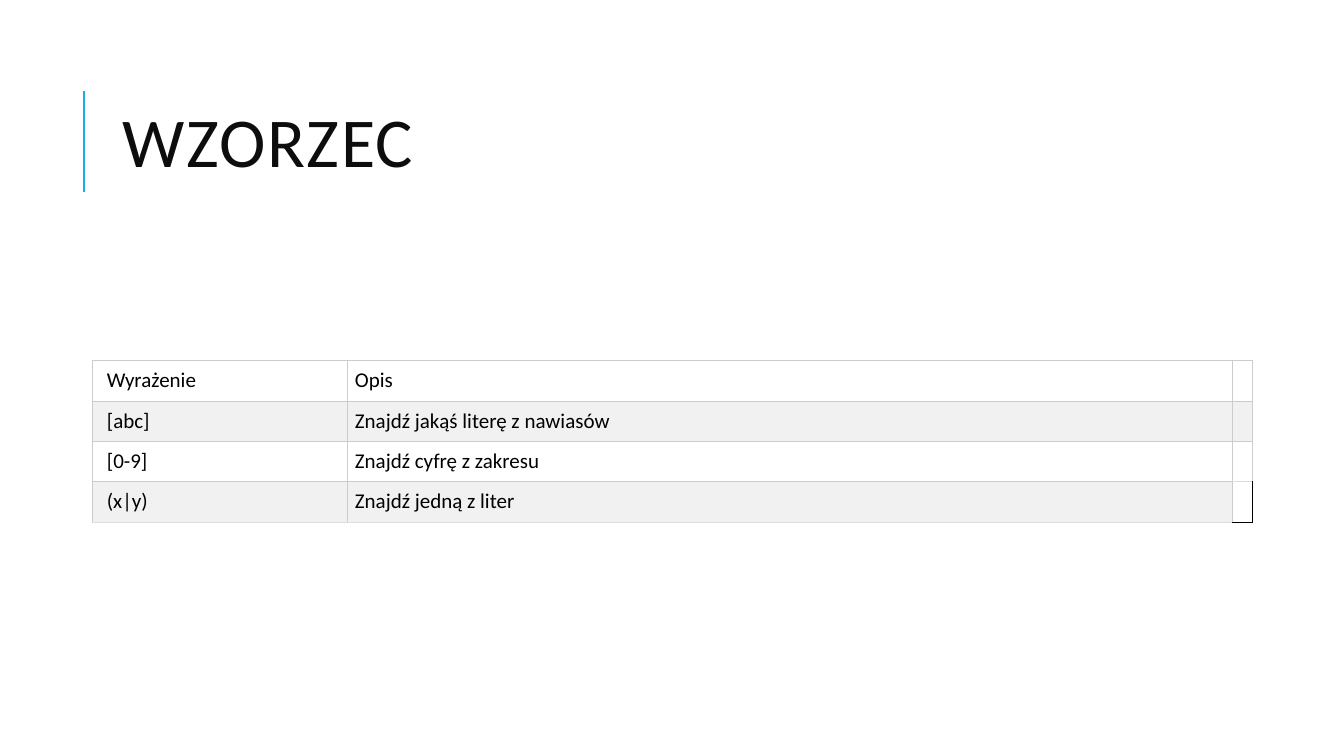
from dataclasses import dataclass

from lxml import etree
from pptx import Presentation
from pptx.dml.color import RGBColor
from pptx.enum.shapes import MSO_CONNECTOR
from pptx.enum.text import MSO_ANCHOR
from pptx.oxml.ns import qn
from pptx.util import Inches, Pt

STRAIGHT = MSO_CONNECTOR.STRAIGHT
MIDDLE = MSO_ANCHOR.MIDDLE
TOP = MSO_ANCHOR.TOP


@dataclass(frozen=True)
class Theme:
    font: str = "Calibri"
    accent: str = "1CADE4"
    title: str = "0D0D0D"
    ink: str = "000000"
    plain: str = "FFFFFF"
    band: str = "F1F1F1"
    grid: str = "CCCCCC"
    pale: str = "DDDDDD"
    title_size: float = 50
    cell_size: float = 15
    rule: float = 1.5
    edge: float = 0.75


@dataclass(frozen=True)
class Entry:
    term: str
    note: str


THEME = Theme()
ENTRIES = [
    Entry("Wyrażenie", "Opis"),
    Entry("[abc]", "Znajdź jakąś literę z nawiasów"),
    Entry("[0-9]", "Znajdź cyfrę z zakresu"),
    Entry("(x|y)", "Znajdź jedną z liter"),
]
WIDTHS = [2.53, 8.77, 0.2]
HEIGHT = 0.4
PAD = 0.07


def write(frame, text: str, *, size: float, color: str,
          spacing: float = 1, track: int = 0) -> None:
    para = frame.paragraphs[0]
    para.line_spacing = spacing
    run = para.add_run()
    run.text = text
    run.font.name = THEME.font
    run.font.size = Pt(size)
    run.font.color.rgb = RGBColor.from_string(color)
    if track:
        run.font._element.set("spc", str(track))


def add_rule(slide) -> None:
    rule = slide.shapes.add_connector(
        STRAIGHT, Inches(0.83), Inches(1.9), Inches(0.83), Inches(0.9))
    rule.line.color.rgb = RGBColor.from_string(THEME.accent)
    rule.line.width = Pt(THEME.rule)
    etree.SubElement(rule._element.spPr, qn("a:effectLst"))


def add_title(slide) -> None:
    box = slide.shapes.add_textbox(
        Inches(1.12), Inches(0.64), Inches(10.63), Inches(1.64))
    frame = box.text_frame
    frame.word_wrap = True
    frame.vertical_anchor = MIDDLE
    write(frame, "WZORZEC", size=THEME.title_size, color=THEME.title,
          spacing=0.8, track=100)


def set_edges(cell, colors: dict[str, str]) -> None:
    props = cell._tc.get_or_add_tcPr()
    for side, color in colors.items():
        line = etree.SubElement(props, qn(f"a:ln{side}"), w=str(Pt(THEME.edge)))
        fill = etree.SubElement(line, qn("a:solidFill"))
        etree.SubElement(fill, qn("a:srgbClr"), val=color)


def pick_edges(row: int, col: int) -> dict[str, str]:
    edges = dict.fromkeys("LRTB", THEME.grid)
    last_row = row == len(ENTRIES) - 1
    last_col = col == len(WIDTHS) - 1
    if last_row and last_col:
        edges.update(R=THEME.ink, T=THEME.pale, B=THEME.ink)
    elif last_row or (last_col and row == len(ENTRIES) - 2):
        edges["B"] = THEME.pale
    return edges


def fill_cell(cell, text: str, row: int, col: int) -> None:
    set_edges(cell, pick_edges(row, col))
    if row == len(ENTRIES) - 1 and not text:
        cell.fill.background()
    else:
        cell.fill.solid()
        shade = THEME.band if row % 2 else THEME.plain
        cell.fill.fore_color.rgb = RGBColor.from_string(shade)
    pad = Inches(PAD if text else 0)
    cell.margin_left = pad * 2 if col == 0 else pad
    cell.margin_right = cell.margin_top = cell.margin_bottom = pad
    cell.vertical_anchor = TOP
    write(cell.text_frame, text, size=THEME.cell_size, color=THEME.ink)


def add_grid(slide) -> None:
    table = slide.shapes.add_table(
        len(ENTRIES), len(WIDTHS), Inches(0.92), Inches(3.58),
        Inches(sum(WIDTHS)), Inches(HEIGHT * len(ENTRIES))).table
    table.first_row = False
    table.horz_banding = False
    for column, width in zip(table.columns, WIDTHS):
        column.width = Inches(width)
    for row, entry in enumerate(ENTRIES):
        table.rows[row].height = Inches(HEIGHT)
        for col, text in enumerate((entry.term, entry.note, "")):
            fill_cell(table.cell(row, col), text, row, col)


def main() -> None:
    deck = Presentation()
    deck.slide_width = Inches(13.33)
    deck.slide_height = Inches(7.5)
    slide = deck.slides.add_slide(deck.slide_layouts[6])
    add_rule(slide)
    add_title(slide)
    add_grid(slide)
    deck.save("out.pptx")


if __name__ == "__main__":
    main()
